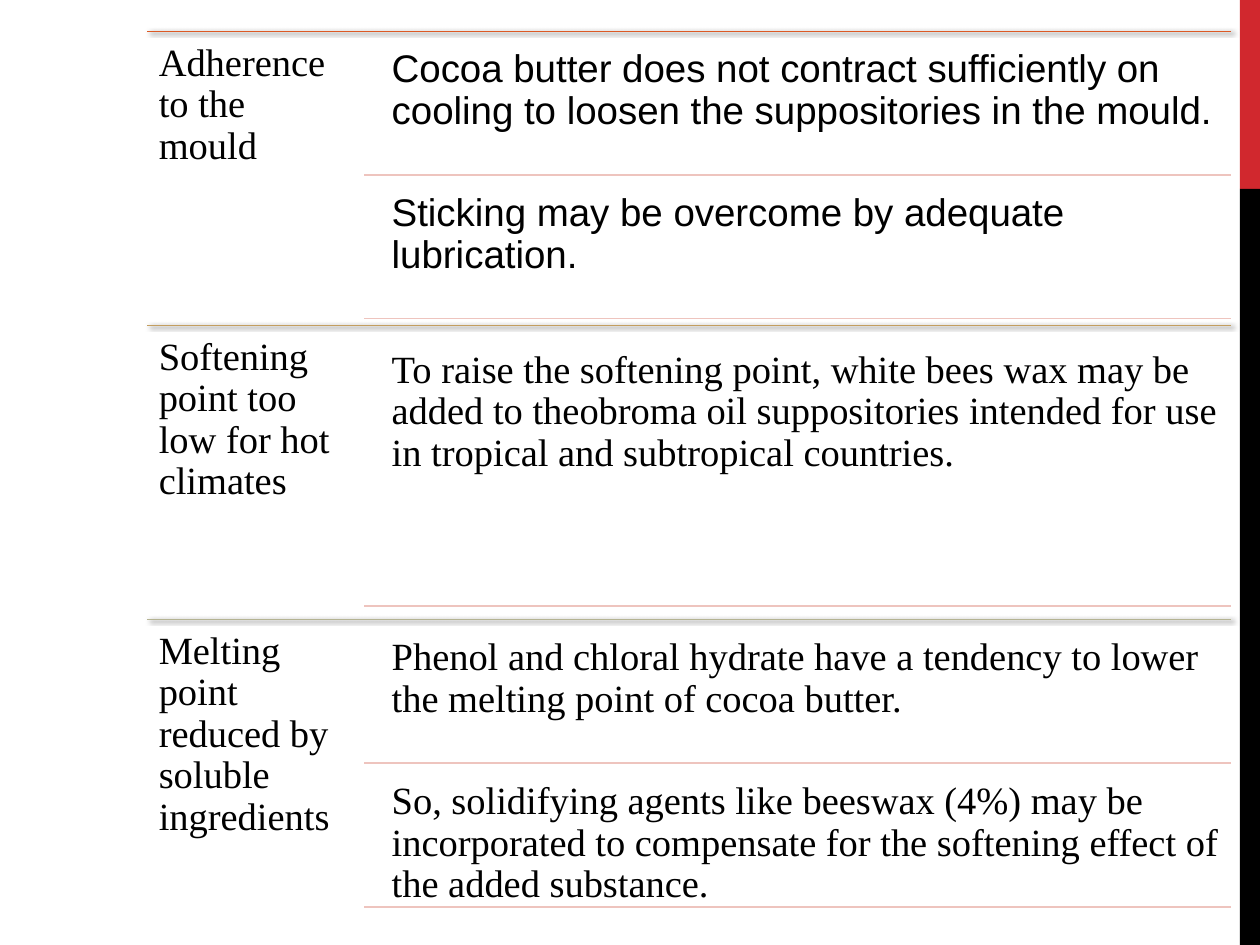
from lxml import etree
from pptx import Presentation
from pptx.dml.color import RGBColor
from pptx.enum.shapes import MSO_CONNECTOR, MSO_SHAPE
from pptx.enum.text import MSO_ANCHOR
from pptx.oxml.ns import qn
from pptx.util import Inches, Pt

RECTANGLE = MSO_SHAPE.RECTANGLE
STRAIGHT = MSO_CONNECTOR.STRAIGHT
TOP = MSO_ANCHOR.TOP

SLIDE_W, SLIDE_H = 10, 7.5
SERIF, SANS = "Times New Roman", "Arial"
BLACK, RED, PALE_RED = "000000", "D1282E", "EEC4BE"
LABEL_SHARE, INDENT_SHARE, GAP_SHARE = 0.2, 0.015, 0.05
FRAME_FORMAT = {
    "word_wrap": True,
    "vertical_anchor": TOP,
    "margin_left": Inches(0.09),
    "margin_top": Inches(0.09),
    "margin_right": Inches(0.09),
    "margin_bottom": Inches(0.09),
}
PARAGRAPH_FORMAT = {"line_spacing": 0.9, "space_after": Pt(7.7)}

SECTIONS = [
    ("Adherence to the mould", "DC5924", SANS, [
        "Cocoa butter does not contract sufficiently on cooling to loosen "
        "the suppositories in the mould.",
        "Sticking may be overcome by adequate lubrication.",
    ]),
    ("Softening point too low for hot climates", "C39E60", SERIF, [
        "To raise the softening point, white bees wax may be added to "
        "theobroma oil suppositories intended for use in tropical and "
        "subtropical countries.",
    ]),
    ("Melting point reduced by soluble ingredients", "B4B392", SERIF, [
        "Phenol and chloral hydrate have a tendency to lower the melting "
        "point of cocoa butter.",
        "So, solidifying agents like beeswax (4%) may be incorporated to "
        "compensate for the softening effect of the added substance.",
    ]),
]


def rgb(value):
    """Turn a hex string into a colour."""
    return RGBColor.from_string(value)


def apply_format(target, values):
    """Set each attribute named in a dict of format values."""
    for name, value in values.items():
        setattr(target, name, value)


def add_rule(slide, left, right, y, color, shadowed=False):
    """Draw a horizontal rule, with a soft shadow if asked."""
    rule = slide.shapes.add_connector(
        STRAIGHT, Inches(left), Inches(y), Inches(right), Inches(y))
    rule.line.color.rgb = rgb(color)
    rule.line.width = Pt(1)
    effects = etree.SubElement(rule._element.spPr, qn("a:effectLst"))
    if shadowed:
        shadow = etree.SubElement(
            effects, qn("a:outerShdw"), blurRad=str(Pt(3)), dist=str(Pt(1.5)),
            dir="0", rotWithShape="0")
        tint = etree.SubElement(shadow, qn("a:srgbClr"), val=BLACK)
        etree.SubElement(tint, qn("a:alpha"), val="60000")


def add_passage(slide, box, wording, font):
    """Place one paragraph of text in a box."""
    frame = slide.shapes.add_textbox(*map(Inches, box)).text_frame
    apply_format(frame, FRAME_FORMAT)
    paragraph = frame.paragraphs[0]
    apply_format(paragraph, PARAGRAPH_FORMAT)
    run = paragraph.add_run()
    run.text = wording
    apply_format(run.font, {"name": font, "size": Pt(22)})
    run.font.color.rgb = rgb(BLACK)


def add_side_band(slide, box):
    """Fill the edge band: one fifth red above four fifths black."""
    left, top, width, height = box
    for start, share, color in ((0, 0.2, RED), (0.2, 0.8, BLACK)):
        block = slide.shapes.add_shape(
            RECTANGLE, Inches(left), Inches(top + start * height),
            Inches(width), Inches(share * height))
        block.shadow.inherit = False
        block.fill.solid()
        block.fill.fore_color.rgb = rgb(color)
        block.line.fill.background()


def add_section(slide, box, section):
    """Place a problem label beside its evenly stacked, ruled remarks."""
    left, top, width, height = box
    label, accent, font, remarks = section
    right = left + width
    label_width = LABEL_SHARE * width
    remark_left = left + label_width + INDENT_SHARE * width
    count = len(remarks)
    remark_height = height / (count + GAP_SHARE * (count + 1))
    gap = GAP_SHARE * remark_height

    add_rule(slide, left, right, top, accent, shadowed=True)
    add_passage(slide, (left, top, label_width, height), label, SERIF)
    for index, remark in enumerate(remarks):
        y = top + gap + index * (remark_height + gap)
        add_passage(
            slide, (remark_left, y, right - remark_left, remark_height),
            remark, font)
        add_rule(slide, left + label_width, right, y + remark_height, PALE_RED)


def add_problem_list(slide, box):
    """Share the box equally among the sections."""
    left, top, width, height = box
    section_height = height / len(SECTIONS)
    for index, section in enumerate(SECTIONS):
        y = top + index * section_height
        add_section(slide, (left, y, width, section_height), section)


def main():
    """Build and save the slide."""
    deck = Presentation()
    deck.slide_width, deck.slide_height = Inches(SLIDE_W), Inches(SLIDE_H)
    slide = deck.slides.add_slide(deck.slide_layouts[6])
    add_side_band(
        slide, (0.984 * SLIDE_W, 0, 0.016 * SLIDE_W, SLIDE_H))
    add_problem_list(slide, (1.17, 0.25, 0.86 * SLIDE_W, SLIDE_H - 0.5))
    deck.save("out.pptx")


if __name__ == "__main__":
    main()
